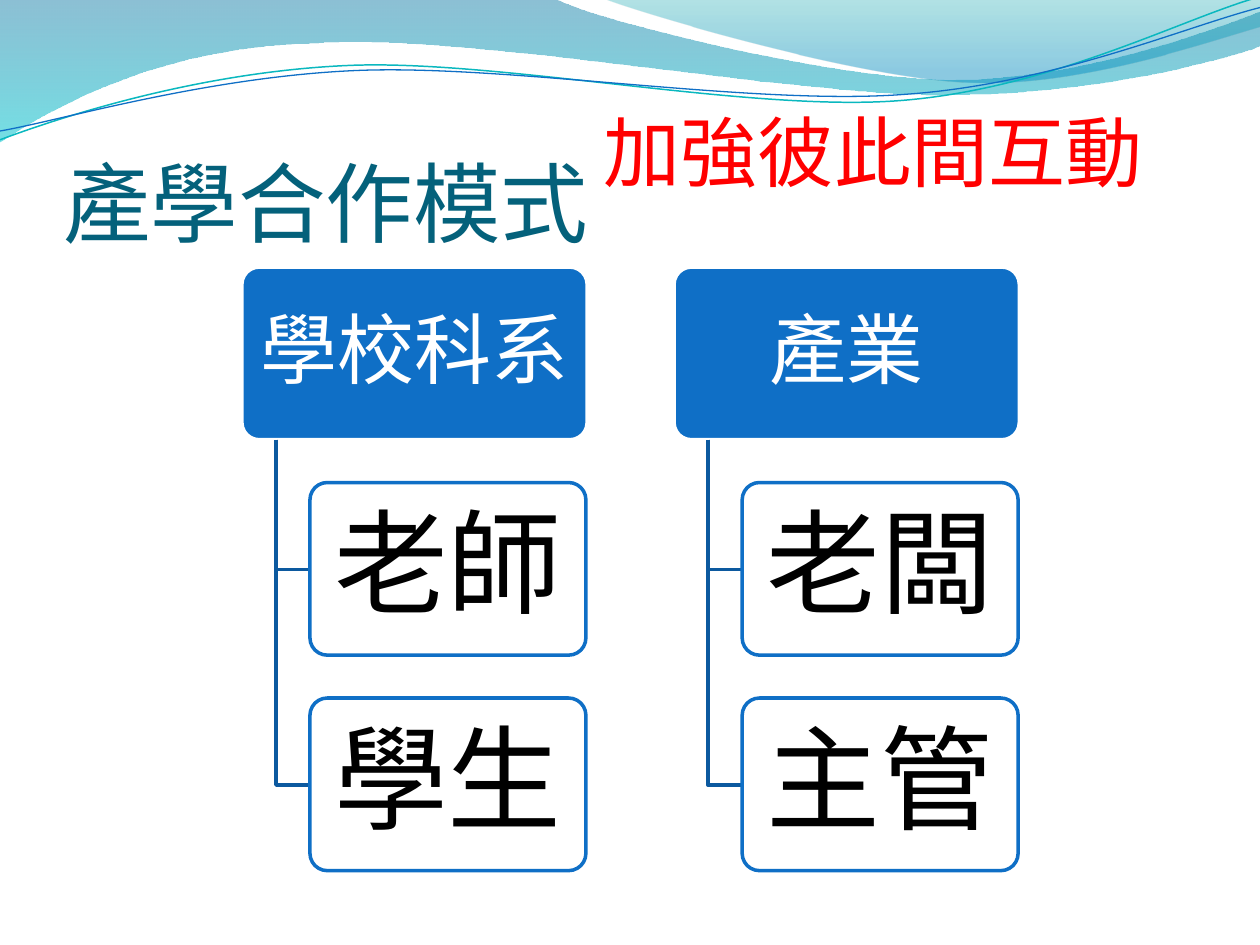
from lxml import etree
from pptx import Presentation
from pptx.dml.color import RGBColor
from pptx.enum.shapes import MSO_SHAPE as Kind
from pptx.enum.text import MSO_ANCHOR as Anchor, MSO_AUTO_SIZE as Auto, PP_ALIGN as Align
from pptx.oxml.ns import qn
from pptx.util import Inches, Pt

BLUE = "0F6FC6"
WAVES = [
    ([(0, 0), (4.4, -0.01), (4.76, 0.17, 6.64, 0.63, 7.58, 0.63),
      (8.53, 0.63, 9.58, 0.26, 10, 0.09), (10.01, 0.36),
      (9.83, 0.44, 8.7, 0.76, 7.46, 0.75), (6.22, 0.75, 3.82, 0.28, 2.57, 0.34),
      (1.29, 0.36, 0.46, 0.83, -0.01, 1.13), (0, 0)],
     [(0, "0074A1", 45), (1, "00C6CF", 55)]),
    ([(4.79, -0.01), (5.09, 0.11, 6.82, 0.62, 7.69, 0.65),
      (8.56, 0.69, 9.61, 0.32, 10, 0.21), (10, 0), (4.79, -0.01)],
     [(0, "00A1A9", 30), (0.8, "008BBF", 45)]),
]
CURVES = [
    ([(0, 1.11), (0.48, 0.93, 1.58, 0.57, 2.77, 0.52),
      (3.95, 0.47, 5.93, 0.89, 7.13, 0.8), (8.33, 0.71, 9.38, 0.15, 9.98, -0.02)],
     "0AB8BF", 0.85),
    ([(0, 1.04), (0.47, 0.96, 1.64, 0.61, 2.83, 0.56),
      (4.03, 0.51, 5.97, 0.84, 7.17, 0.75), (8.36, 0.67, 9.41, 0.21, 10, 0.06)],
     BLUE, 0.75),
]
TREES = [("學校科系", ["老師", "學生"]), ("產業", ["老闆", "主管"])]


def paint(color, code):
    """Set a colour from a hex string."""
    color.rgb = RGBColor.from_string(code)


def fade(node, pct):
    """Give a colour element an opacity in percent."""
    etree.SubElement(node, qn("a:alpha"), val=str(pct * 1000))


def stroke(shape, code, width):
    """Set the outline of a shape."""
    paint(shape.line.color, code)
    shape.line.width = Pt(width)


def write(shape, text, size, font, code, align=Align.LEFT, anchor=Anchor.TOP,
          inset=(0.1, 0.05, 0.1, 0.05), lead=None, after=0):
    """Put formatted text into a shape."""
    frame = shape.text_frame
    frame.word_wrap = True
    frame.vertical_anchor = anchor
    (frame.margin_left, frame.margin_top,
     frame.margin_right, frame.margin_bottom) = map(Inches, inset)
    para = frame.paragraphs[0]
    para.alignment = align
    para.line_spacing = lead
    para.space_after = Pt(after)
    run = para.add_run()
    run.text = text
    run.font.size = Pt(size)
    run.font.name = font
    paint(run.font.color, code)


def bend(shape, steps):
    """Join the line triples of each curve step into a Bezier."""
    nodes = iter(list(shape.element.iter(qn("a:lnTo"))))
    for step in steps[1:]:
        first = next(nodes)
        if len(step) == 6:
            first.tag = qn("a:cubicBezTo")
            for node in (next(nodes), next(nodes)):
                first.append(node[0])
                node.getparent().remove(node)


def draw(slide, steps, close=False):
    """Build a freeform along line and curve steps."""
    points = [(Inches(x), Inches(y)) for step in steps
              for x, y in zip(step[::2], step[1::2])]
    pen = slide.shapes.build_freeform(*points[0])
    pen.add_line_segments(points[1:], close=close)
    shape = pen.convert_to_shape()
    shape.shadow.inherit = False
    bend(shape, steps)
    return shape


def wave(slide, steps, stops):
    """Draw a translucent gradient wave."""
    shape = draw(slide, steps, close=True)
    shape.line.fill.background()
    shape.fill.gradient()
    shape.fill.gradient_angle = 270
    for stop, (place, code, pct) in zip(shape.fill.gradient_stops, stops):
        stop.position = place
        paint(stop.color, code)
    nodes = list(shape.element.spPr.iter(qn("a:srgbClr")))
    for node, (place, code, pct) in zip(nodes, stops):
        fade(node, pct)


def curve(slide, steps, code, width):
    """Draw an open line."""
    shape = draw(slide, steps)
    shape.fill.background()
    stroke(shape, code, width)


def card(slide, text, left, top, width, fill, line, pct=100, **form):
    """Draw a rounded box with centred text."""
    box = slide.shapes.add_shape(Kind.ROUNDED_RECTANGLE, Inches(left), Inches(top),
                                 Inches(width), Inches(1.37))
    box.adjustments[0] = 0.1
    box.shadow.inherit = False
    box.fill.solid()
    paint(box.fill.fore_color, fill)
    if pct < 100:
        fade(box.element.spPr.find(".//" + qn("a:srgbClr")), pct)
    stroke(box, line, 2)
    write(box, text, font="Vollkorn", align=Align.CENTER, anchor=Anchor.MIDDLE,
          lead=0.9, **form)


def tree(slide, left, head, items):
    """Draw a heading box with its items hung below."""
    card(slide, head, left, 2.12, 2.74, BLUE, "FFFFFF",
         size=44, code="FFFFFF", inset=(0.09, 0.06, 0.09, 0.06), after=4)
    for i, item in enumerate(items):
        top = 3.83 + 1.71 * i
        stem, side, mid = left + 0.27, left + 0.54, top + 0.69
        curve(slide, [(stem, 3.49), (stem, mid), (side, mid)], "0C599F", 2)
        card(slide, item, side, top, 2.19, "FFFFFF", BLUE, pct=90,
             size=65, code="000000", inset=(0.14, 0.09, 0.14, 0.09), after=6)


def main():
    """Build the slide and save it."""
    deck = Presentation()
    deck.slide_width, deck.slide_height = Inches(10), Inches(7.5)
    slide = deck.slides.add_slide(deck.slide_layouts[5])
    for steps, stops in WAVES:
        wave(slide, steps, stops)
    for steps, code, width in CURVES:
        curve(slide, steps, code, width)
    title = slide.shapes.title
    title.left, title.top, title.width, title.height = map(Inches, (0.5, 0.77, 9, 1.25))
    write(title, "產學合作模式", 50, "Calibri", "04617B",
          anchor=Anchor.BOTTOM, inset=(0, 0.05, 0, 0))
    for i, (head, items) in enumerate(TREES):
        tree(slide, 1.92 + 3.43 * i, head, items)
    note = slide.shapes.add_textbox(*map(Inches, (4.69, 0.78, 5, 0.84)))
    write(note, "加強彼此間互動", 44, "Vollkorn", "FF0000")
    note.text_frame.auto_size = Auto.SHAPE_TO_FIT_TEXT
    deck.save("out.pptx")


if __name__ == "__main__":
    main()
